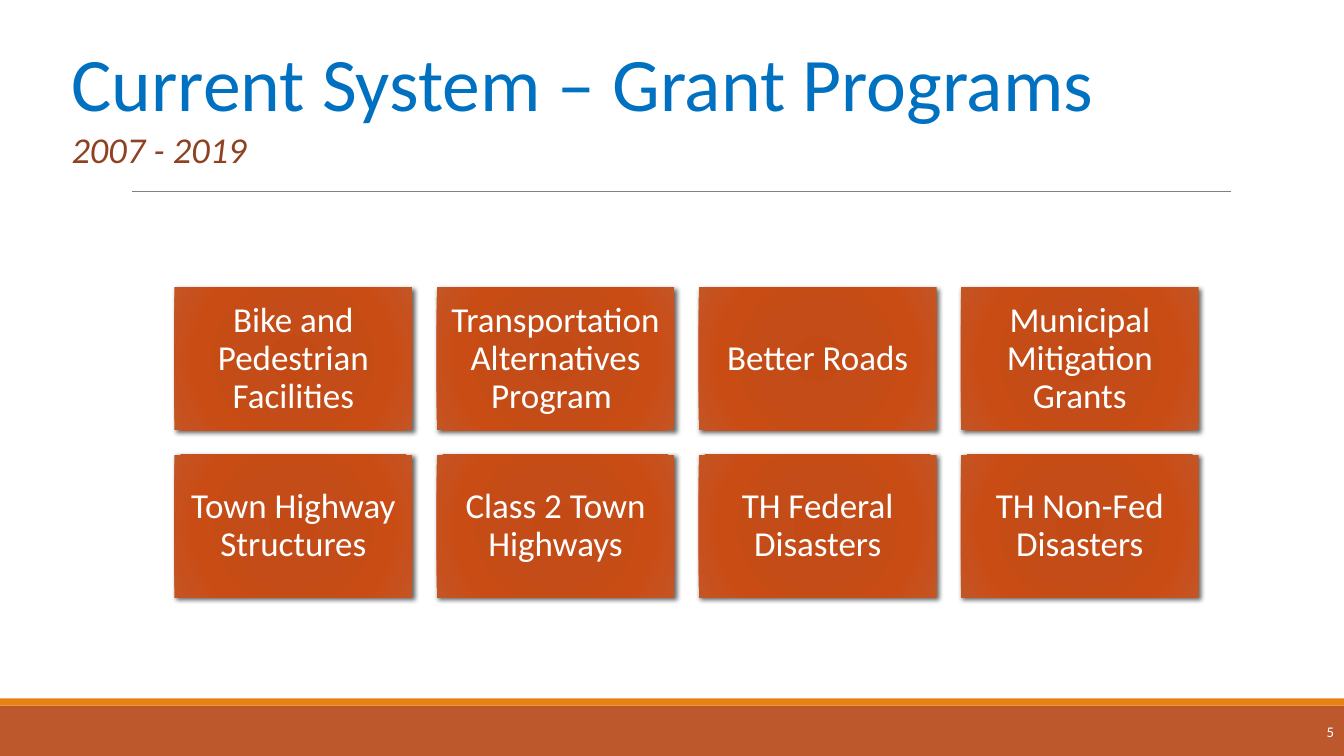
from lxml import etree
from pptx import Presentation, util as u
from pptx.dml.color import RGBColor
from pptx.enum import shapes, text
from pptx.oxml import parse_xml
from pptx.oxml.ns import nsdecls, qn

TITLE_LINES = [
    ("Current System – Grant Programs", dict(size=u.Pt(54), italic=False), "0070C0"),
    ("2007 - 2019", dict(size=u.Pt(26), italic=True), "8E4221"),
]
PROGRAMS = [
    ["Bike and Pedestrian Facilities", "Transportation Alternatives Program ",
     "Better Roads", "Municipal Mitigation Grants"],
    ["Town Highway Structures", "Class 2 Town Highways",
     "TH Federal Disasters", "TH Non-Fed Disasters"],
]
PAGE_NUMBER = "5"
FOOTER_BANDS = [(7, 0.5, "BD582C"), (6.93, 0.07, "E48312")]  # top, height, colour
CARD_STOPS = [(0, "C44A15"), (34, "C34C18"), (70, "C94C15"), (100, "C45525")]

SLIDE_WIDTH, SLIDE_HEIGHT = 13.33, 7.5
GRID_LEFT, GRID_TOP = 1.73, 2.85
CARD_WIDTH, CARD_HEIGHT, GAP = 2.36, 1.42, 0.24


def rgb(value):
    return RGBColor.from_string(value)


def inches(*values):
    return [u.Inches(value) for value in values]


def write(paragraph, words, color, alignment, **font_values):
    paragraph.text = words
    paragraph.alignment = alignment
    paragraph.space_before = u.Pt(0)
    paragraph.font.color.rgb = rgb(color)
    for name, value in dict(name="Calibri", **font_values).items():
        setattr(paragraph.font, name, value)


def add_rectangle(slide, left, top, width, height):
    shape = slide.shapes.add_shape(shapes.MSO_SHAPE.RECTANGLE,
                                   *inches(left, top, width, height))
    shape.shadow.inherit = False
    shape.line.fill.background()
    return shape


def style_card(shape):
    """Give a card its radial gradient and soft shadow."""
    stops = "".join(f'<a:gs pos="{position * 1000}"><a:srgbClr val="{color}"/></a:gs>'
                    for position, color in CARD_STOPS)
    gradient = parse_xml(
        f'<a:gradFill {nsdecls("a")} rotWithShape="1"><a:gsLst>{stops}</a:gsLst>'
        '<a:path path="circle"><a:fillToRect l="100000" t="100000" r="100000" b="100000"/>'
        '</a:path></a:gradFill>')
    properties = shape.element.spPr
    properties.find(qn("a:prstGeom")).addnext(gradient)
    properties.find(qn("a:effectLst")).append(parse_xml(
        f'<a:outerShdw {nsdecls("a")} blurRad="{u.Pt(3.5)}" dist="{u.Pt(2)}" dir="2700000" '
        'algn="tl" rotWithShape="0"><a:srgbClr val="000000"><a:alpha val="60000"/>'
        '</a:srgbClr></a:outerShdw>'))


def add_card(slide, row, column, label):
    shape = add_rectangle(slide, GRID_LEFT + column * (CARD_WIDTH + GAP),
                          GRID_TOP + row * (CARD_HEIGHT + GAP), CARD_WIDTH, CARD_HEIGHT)
    style_card(shape)
    frame = shape.text_frame
    frame.word_wrap = True
    frame.vertical_anchor = text.MSO_ANCHOR.MIDDLE
    for side in ("left", "top", "right", "bottom"):
        setattr(frame, f"margin_{side}", u.Inches(0.1))
    paragraph = frame.paragraphs[0]
    write(paragraph, label, "FFFFFF", text.PP_ALIGN.CENTER, size=u.Pt(25))
    paragraph.line_spacing = 0.9


def add_title(slide):
    title = slide.shapes.title
    title.left, title.top, title.width, title.height = inches(0.61, 0.31, 10.45, 1.45)
    frame = title.text_frame
    frame.word_wrap = False
    frame.auto_size = text.MSO_AUTO_SIZE.SHAPE_TO_FIT_TEXT
    frame.vertical_anchor = text.MSO_ANCHOR.TOP
    for index, (words, font_values, color) in enumerate(TITLE_LINES):
        paragraph = frame.add_paragraph() if index else frame.paragraphs[0]
        write(paragraph, words, color, text.PP_ALIGN.LEFT, **font_values)


def add_rule(slide):
    rule = slide.shapes.add_connector(shapes.MSO_CONNECTOR.STRAIGHT,
                                      *inches(1.31, 1.9, 12.21, 1.9))
    rule.line.color.rgb = rgb("808080")
    rule.line.width = u.Pt(0.5)
    etree.SubElement(rule.element.spPr, qn("a:effectLst"))


def add_page_number(slide):
    box = slide.shapes.add_textbox(*inches(11.9, 7.06, 1.43, 0.4))
    box.text_frame.word_wrap = True
    box.text_frame.vertical_anchor = text.MSO_ANCHOR.MIDDLE
    write(box.text_frame.paragraphs[0], PAGE_NUMBER, "FFFFFF", text.PP_ALIGN.RIGHT,
          size=u.Pt(10.5))


def main():
    presentation = Presentation()
    presentation.slide_width, presentation.slide_height = inches(SLIDE_WIDTH, SLIDE_HEIGHT)
    slide = presentation.slides.add_slide(presentation.slide_layouts[5])
    for top, height, color in FOOTER_BANDS:
        band = add_rectangle(slide, 0, top, SLIDE_WIDTH, height)
        band.fill.solid()
        band.fill.fore_color.rgb = rgb(color)
    add_rule(slide)
    for row, labels in enumerate(PROGRAMS):
        for column, label in enumerate(labels):
            add_card(slide, row, column, label)
    add_page_number(slide)
    add_title(slide)
    presentation.save("out.pptx")


if __name__ == "__main__":
    main()
